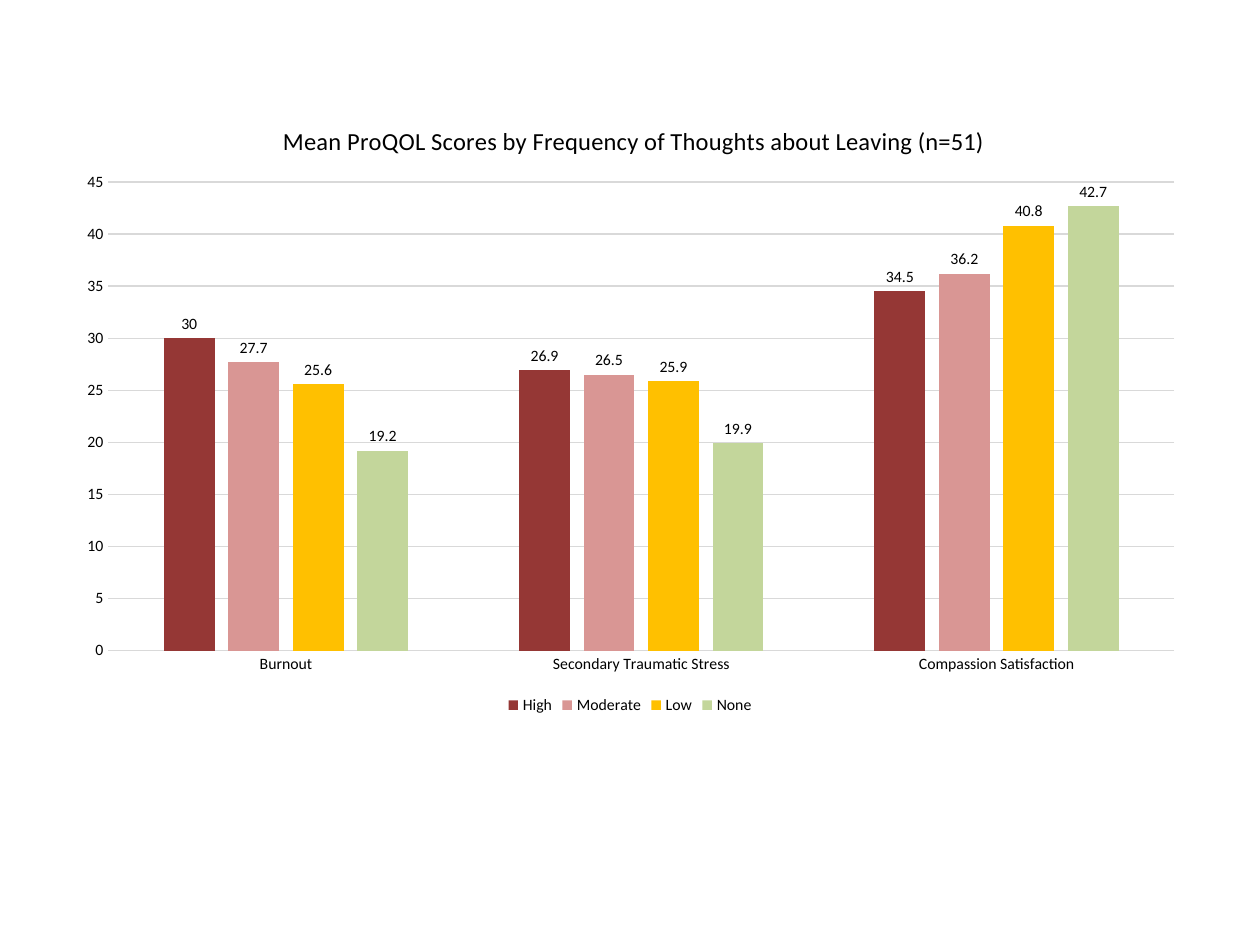
import pptx
import pptx.chart.data
import pptx.dml.color
import pptx.enum.chart
import pptx.oxml
import pptx.oxml.ns
import pptx.util
from pptx.util import Inches

TITLE = "Mean ProQOL Scores by Frequency of Thoughts about Leaving (n=51)"
CATEGORIES = ["Burnout", "Secondary Traumatic Stress", "Compassion Satisfaction"]
SERIES = [
    ("High", (30, 26.9, 34.5), "953735"),
    ("Moderate", (27.7, 26.5, 36.2), "D99694"),
    ("Low", (25.6, 25.9, 40.8), "FFC000"),
    ("None", (19.2, 19.9, 42.7), "C3D69B"),
]
THEME = {"font": "Calibri", "text": "000000", "grid": "D9D9D9",
         "title_size": 14, "label_size": 9, "line_width": 0.75}
TITLE_LAYOUT = {"xMode": "edge", "yMode": "edge", "x": 0.19, "y": 0.04}
PLOT_LAYOUT = {"layoutTarget": "inner", "xMode": "edge", "yMode": "edge",
               "x": 0.04, "y": 0.14, "w": 0.94, "h": 0.75}


def color(value):
    return pptx.dml.color.RGBColor.from_string(value)


def style_font(font, size):
    font.name = THEME["font"]
    font.size = pptx.util.Pt(size)
    font.bold = False
    font.color.rgb = color(THEME["text"])


def style_line(line):
    line.color.rgb = color(THEME["grid"])
    line.width = pptx.util.Pt(THEME["line_width"])


def set_layout(parent, values, predecessor=None):
    for layout in parent.findall(pptx.oxml.ns.qn("c:layout")):
        parent.remove(layout)
    settings = "".join(f'<c:{name} val="{value}"/>' for name, value in values.items())
    layout = pptx.oxml.parse_xml(
        f'<c:layout {pptx.oxml.ns.nsdecls("c")}>'
        f"<c:manualLayout>{settings}</c:manualLayout></c:layout>")
    if predecessor is None:
        parent.insert(0, layout)
    else:
        predecessor.addnext(layout)


def add_title(chart):
    chart.has_title = True
    title = chart.chart_title
    title.include_in_layout = False
    paragraph = title.text_frame.paragraphs[0]
    paragraph.text = TITLE
    style_font(paragraph.runs[0].font, THEME["title_size"])
    element = chart.element.find(".//" + pptx.oxml.ns.qn("c:title"))
    set_layout(element, TITLE_LAYOUT, element.find(pptx.oxml.ns.qn("c:tx")))


def style_axes(chart):
    for axis in (chart.category_axis, chart.value_axis):
        axis.major_tick_mark = pptx.enum.chart.XL_TICK_MARK.NONE
        axis.minor_tick_mark = pptx.enum.chart.XL_TICK_MARK.NONE
        style_font(axis.tick_labels.font, THEME["label_size"])
    style_line(chart.category_axis.format.line)
    value_axis = chart.value_axis
    value_axis.minimum_scale, value_axis.maximum_scale, value_axis.major_unit = 0, 45, 5
    value_axis.format.line.fill.background()
    style_line(value_axis.major_gridlines.format.line)


def style_columns(chart):
    plot = chart.plots[0]
    plot.vary_by_categories = False
    plot.gap_width, plot.overlap = 219, -27
    for series, (_, _, fill) in zip(plot.series, SERIES):
        series.invert_if_negative = False
        series.format.fill.solid()
        series.format.fill.fore_color.rgb = color(fill)
        labels = series.data_labels
        labels.show_value = True
        labels.position = pptx.enum.chart.XL_LABEL_POSITION.OUTSIDE_END
        style_font(labels.font, THEME["label_size"])


def add_score_chart(slide):
    data = pptx.chart.data.CategoryChartData()
    data.categories = CATEGORIES
    for name, values, _ in SERIES:
        data.add_series(name, values)
    chart = slide.shapes.add_chart(
        pptx.enum.chart.XL_CHART_TYPE.COLUMN_CLUSTERED,
        Inches(0.5), Inches(0.75), Inches(9), Inches(4.96), data).chart
    style_font(chart.font, 10)
    add_title(chart)
    style_axes(chart)
    style_columns(chart)
    chart.has_legend = True
    chart.legend.position = pptx.enum.chart.XL_LEGEND_POSITION.BOTTOM
    chart.legend.include_in_layout = False
    style_font(chart.legend.font, THEME["label_size"])
    set_layout(chart.element.find(".//" + pptx.oxml.ns.qn("c:plotArea")), PLOT_LAYOUT)


def main():
    """Build the slide comparing mean ProQOL scores."""
    presentation = pptx.Presentation()
    presentation.slide_width, presentation.slide_height = Inches(10), Inches(7.5)
    slide = presentation.slides.add_slide(presentation.slide_layouts[6])
    add_score_chart(slide)
    presentation.save("out.pptx")


if __name__ == "__main__":
    main()
